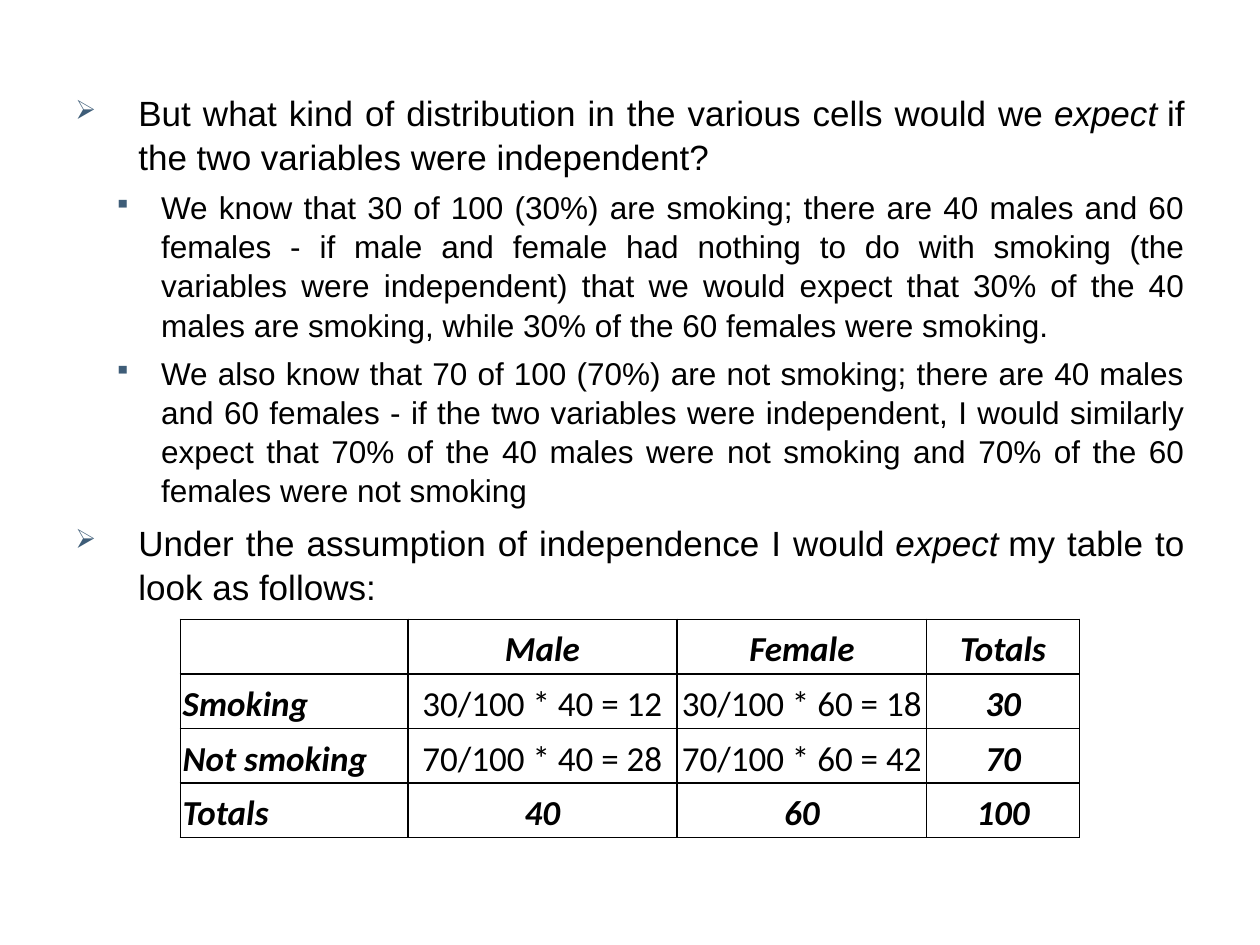
from lxml.etree import SubElement
from pptx import Presentation
from pptx.dml.color import RGBColor
from pptx.enum.text import MSO_ANCHOR, PP_ALIGN
from pptx.oxml.ns import qn
from pptx.util import Pt

BLACK = RGBColor(0, 0, 0)
BULLET = RGBColor(0x3E, 0x5D, 0x78)

LEVELS = [
    dict(char="➢", left=36, hang=36, size=20, before=6),
    dict(char="▪", left=49, hang=27, size=18, before=5),
]
POINTS = [
    (0, ["But what kind of distribution in the various cells would we\u00a0", "expect",
         "\u00a0if the two variables were independent?"]),
    (1, ["We know that 30 of 100 (30%) are smoking; there are 40 males and 60 females - "
         "if male and female had nothing to do with smoking (the variables were independent) "
         "that we would expect that 30% of the 40 males are smoking, "
         "while 30% of the 60 females were smoking."]),
    (1, ["We also know that 70 of 100 (70%) are not smoking; there are 40 males and 60 females - "
         "if the two variables were independent, I would similarly expect that 70% of the 40 males "
         "were not smoking and 70% of the 60 females were not smoking"]),
    (0, ["Under the assumption of independence I would\u00a0", "expect",
         "\u00a0my table to look as follows:"]),
]
ROWS = [
    ["", "Male", "Female", "Totals"],
    ["Smoking", "30/100 * 40 = 12", "30/100 * 60 = 18", "30"],
    ["Not smoking", "70/100 * 40 = 28", "70/100 * 60 = 42", "70"],
    ["Totals", "40", "60", "100"],
]
COL_WIDTHS = [130, 154, 142.5, 87.5]


def style_run(r, font, size, bold=False, italic=False):
    """Set the font of a run."""
    f = r.font
    f.name, f.size, f.bold, f.italic = font, Pt(size), bold, italic
    f.color.rgb = BLACK


def add_bullet(p, level):
    """Give a paragraph the hanging bullet of its level."""
    pPr = p._p.get_or_add_pPr()
    pPr.set("marL", str(Pt(level["left"])))
    pPr.set("indent", str(-Pt(level["hang"])))
    clr = SubElement(pPr, qn("a:buClr"))
    SubElement(clr, qn("a:srgbClr")).set("val", str(BULLET))
    SubElement(pPr, qn("a:buSzPct")).set("val", "76000")
    SubElement(pPr, qn("a:buChar")).set("char", level["char"])


def add_points(s, left, top, width, height):
    """Place the bulleted argument; every second run is emphasised."""
    tf = s.shapes.add_textbox(Pt(left), Pt(top), Pt(width), Pt(height)).text_frame
    tf.word_wrap = True
    for i, (depth, parts) in enumerate(POINTS):
        level = LEVELS[depth]
        p = tf.add_paragraph() if i else tf.paragraphs[0]
        p.level = depth
        p.alignment = PP_ALIGN.JUSTIFY
        p.line_spacing = 1.04
        p.space_before = Pt(level["before"])
        add_bullet(p, level)
        for j, part in enumerate(parts):
            r = p.add_run()
            r.text = part
            style_run(r, "Arial", level["size"], italic=j % 2 == 1)


def add_borders(cell):
    """Draw a thin black line on all sides of a cell."""
    tcPr = cell._tc.get_or_add_tcPr()
    for i, side in enumerate(("a:lnL", "a:lnR", "a:lnT", "a:lnB")):
        ln = tcPr.makeelement(qn(side), {"w": str(Pt(1))})
        fill = SubElement(ln, qn("a:solidFill"))
        SubElement(fill, qn("a:srgbClr")).set("val", str(BLACK))
        tcPr.insert(i, ln)


def add_expected_table(s, left, top, width, height):
    """Place the table of expected counts."""
    n = len(ROWS)
    table = s.shapes.add_table(n, len(COL_WIDTHS), Pt(left), Pt(top), Pt(width), Pt(height)).table
    for col, w in zip(table.columns, COL_WIDTHS):
        col.width = Pt(width * w / sum(COL_WIDTHS))
    for i, texts in enumerate(ROWS):
        table.rows[i].height = Pt(height / n)
        for j, text in enumerate(texts):
            cell = table.cell(i, j)
            cell.fill.background()
            add_borders(cell)
            cell.vertical_anchor = MSO_ANCHOR.MIDDLE
            cell.margin_left = cell.margin_right = Pt(1.44)
            cell.margin_top = cell.margin_bottom = Pt(1.44)
            p = cell.text_frame.paragraphs[0]
            p.text = text
            p.alignment = PP_ALIGN.CENTER if j else PP_ALIGN.LEFT
            p.line_spacing = 1.15
            strong = "=" not in text
            for r in p.runs:
                style_run(r, "Calibri", 20, strong, strong)


def main():
    """Build the slide and save it."""
    prs = Presentation()
    prs.slide_width, prs.slide_height = Pt(720), Pt(540)
    s = prs.slides.add_slide(prs.slide_layouts[6])
    add_points(s, 36, 48, 648, 455)
    add_expected_table(s, 103, 354, 514, 124.8)
    prs.save("out.pptx")


if __name__ == "__main__":
    main()
